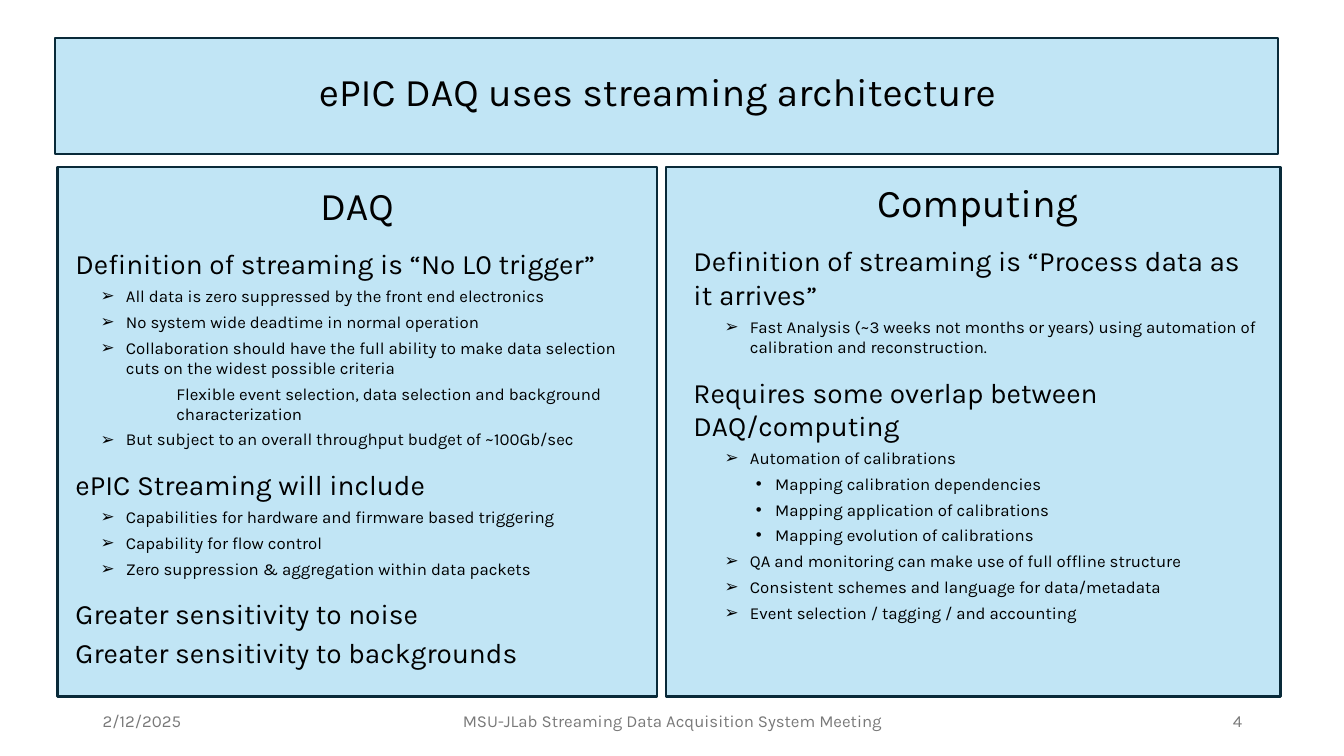
from lxml.etree import SubElement
from pptx import Presentation
from pptx.dml.color import RGBColor
from pptx.enum.shapes import MSO_SHAPE as Shape
from pptx.enum.text import MSO_ANCHOR as Anchor, PP_ALIGN as Align
from pptx.oxml.ns import qn
from pptx.util import Inches, Pt

COLORS = {"panel": "C1E5F5", "border": "092A39", "text": "000000", "footer": "797979"}
FONT = "Karla"

STYLES = {
    "title": dict(size=28, align=Align.CENTER),
    "first": dict(size=20, before=9),
    "head": dict(size=20),
    "arrow": dict(size=12, margin=0.5, indent=-0.25, bullet="➢"),
    "plain": dict(size=12, margin=1),
    "wide arrow": dict(size=12, margin=0.56, indent=-0.25, bullet="➢"),
    "dot": dict(size=12, margin=0.81, indent=-0.19, bullet="•"),
}

DAQ = [
    ("title", "DAQ"),
    ("first", "Definition of streaming is “No L0 trigger”"),
    ("arrow", "All data is zero suppressed by the front end electronics"),
    ("arrow", "No system wide deadtime in normal operation"),
    ("arrow", "Collaboration should have the full ability to make data selection "
              "cuts on the widest possible criteria"),
    ("plain", "Flexible event selection, data selection and background characterization"),
    ("arrow", "But subject to an overall throughput budget of ~100Gb/sec"),
    ("first", "ePIC Streaming will include"),
    ("arrow", "Capabilities for hardware and firmware based triggering"),
    ("arrow", "Capability for flow control"),
    ("arrow", "Zero suppression & aggregation within data packets"),
    ("first", "Greater sensitivity to noise"),
    ("head", "Greater sensitivity to backgrounds"),
]

COMPUTING = [
    ("title", "Computing"),
    ("first", "Definition of streaming is “Process data as it arrives”"),
    ("wide arrow", "Fast Analysis (~3 weeks not months or years) using automation of "
                   "calibration and reconstruction."),
    ("first", "Requires some overlap between DAQ/computing"),
    ("wide arrow", "Automation of calibrations"),
    ("dot", "Mapping calibration dependencies"),
    ("dot", "Mapping application of calibrations"),
    ("dot", "Mapping evolution of calibrations"),
    ("wide arrow", "QA and monitoring can make use of full offline structure"),
    ("wide arrow", "Consistent schemes and language for data/metadata"),
    ("wide arrow", "Event selection / tagging / and accounting"),
]


def color(name):
    return RGBColor.from_string(COLORS[name])


def write(paragraph, text, size, align=Align.LEFT, before=0, after=4,
          margin=0, indent=0, bullet=None, ink="text"):
    paragraph.text = text
    paragraph.alignment = align
    paragraph.space_before = Pt(before)
    paragraph.space_after = Pt(after)
    properties = paragraph._p.get_or_add_pPr()
    properties.set("marL", str(Inches(margin)))
    properties.set("indent", str(Inches(indent)))
    if bullet:
        SubElement(properties, qn("a:buFont"), typeface="Arial")
        SubElement(properties, qn("a:buChar"), char=bullet)
    paragraph.font.name = FONT
    paragraph.font.size = Pt(size)
    paragraph.font.color.rgb = color(ink)


def add_text(slide, left, top, width, height):
    frame = slide.shapes.add_textbox(
        Inches(left), Inches(top), Inches(width), Inches(height)).text_frame
    frame.word_wrap = True
    return frame


def add_panel(slide, box, inset, content):
    left, top, width, height = box
    panel = slide.shapes.add_shape(Shape.RECTANGLE, *map(Inches, box))
    panel.shadow.inherit = False
    panel.fill.solid()
    panel.fill.fore_color.rgb = color("panel")
    panel.line.color.rgb = color("border")
    panel.line.width = Pt(1.5)

    dx, dy, text_width, text_height = inset
    frame = add_text(slide, left + dx, top + dy, text_width, text_height)
    for index, (style, text) in enumerate(content):
        paragraph = frame.add_paragraph() if index else frame.paragraphs[0]
        write(paragraph, text, **STYLES[style])


def add_footer(slide, left, top, height):
    entries = [
        (0, 3, "2/12/2025", Align.LEFT),
        (3.5, 4.5, "MSU-JLab Streaming Data Acquisition System Meeting", Align.CENTER),
        (8.5, 3, "4", Align.RIGHT),
    ]
    for offset, width, text, align in entries:
        frame = add_text(slide, left + offset, top, width, height)
        frame.vertical_anchor = Anchor.MIDDLE
        write(frame.paragraphs[0], text, 12, align, after=0, ink="footer")


def main():
    deck = Presentation()
    deck.slide_width, deck.slide_height = Inches(13.33), Inches(7.5)
    slide = deck.slides.add_slide(deck.slide_layouts[6])
    add_footer(slide, 0.92, 6.95, 0.4)
    add_panel(slide, (6.61, 1.66, 6.09, 5.25), (0.17, 0.06, 5.83, 4.78), COMPUTING)
    add_panel(slide, (0.57, 1.66, 5.95, 5.25), (0.08, 0.09, 5.78, 4.99), DAQ)
    add_panel(slide, (0.55, 0.38, 12.13, 1.15), (0.42, 0.24, 11.1, 0.46),
              [("title", "ePIC DAQ uses streaming architecture")])
    deck.save("out.pptx")


if __name__ == "__main__":
    main()
